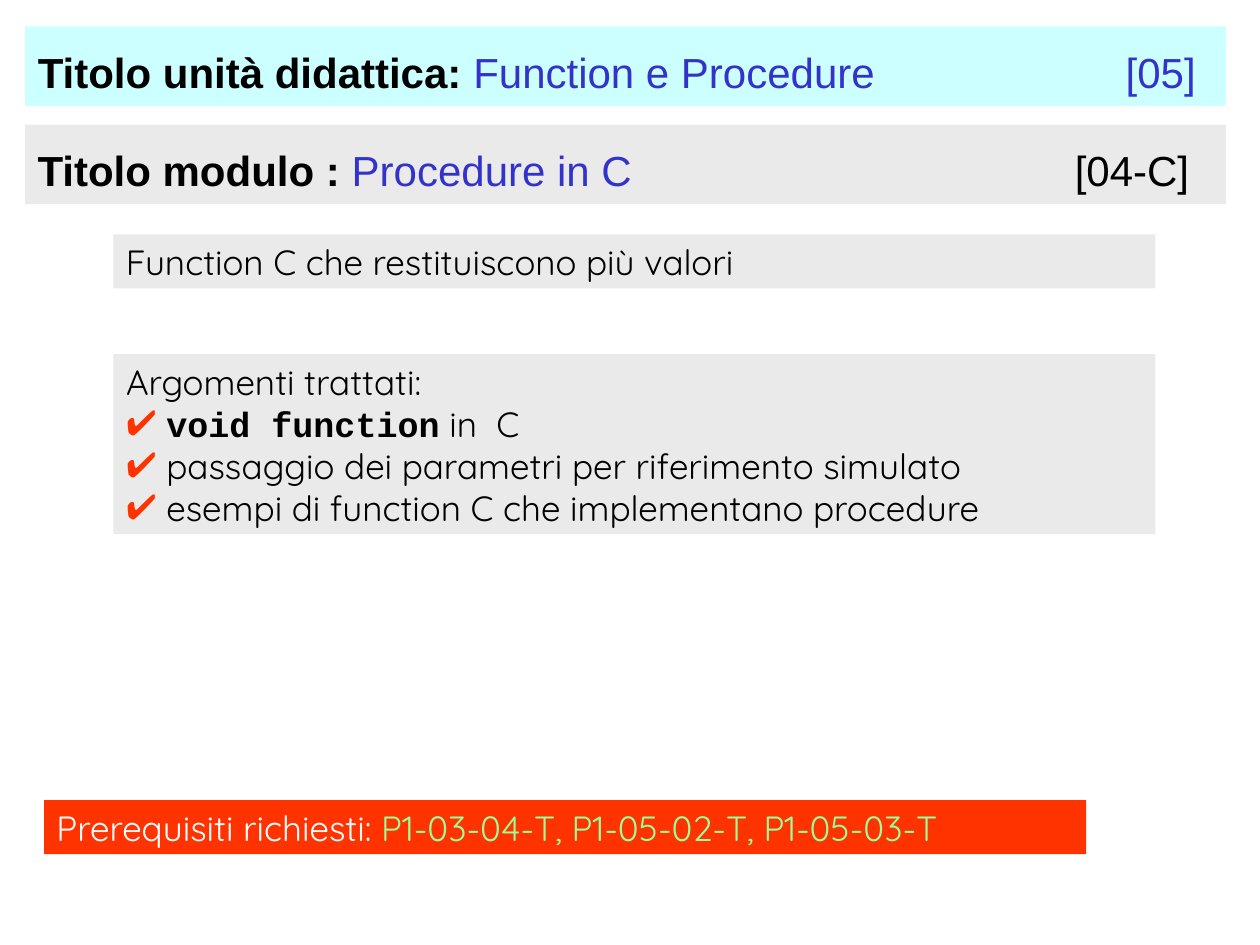
from lxml import etree
from pptx import Presentation
from pptx.dml.color import RGBColor
from pptx.enum.shapes import MSO_SHAPE
from pptx.enum.text import MSO_ANCHOR, MSO_AUTO_SIZE, PP_ALIGN
from pptx.oxml.ns import qn
from pptx.util import Inches, Pt

RECT = MSO_SHAPE.RECTANGLE
TOP, BOTTOM = MSO_ANCHOR.TOP, MSO_ANCHOR.BOTTOM
LEFT = PP_ALIGN.LEFT
FIXED = MSO_AUTO_SIZE.NONE

COLORS = {
    "white": "FFFFFF", "black": "000000", "cyan": "CCFFFF", "gray": "EAEAEA",
    "blue": "3333CC", "red": "FF3300", "green": "99FF99",
}


def paint(fill, name):
    fill.solid()
    fill.fore_color.rgb = RGBColor.from_string(COLORS[name])


def write(par, text, size=20, font="Quicksand", color="black", bold=False):
    run = par.add_run()
    run.text = text
    run.font.size = Pt(size)
    run.font.name = font
    run.font.bold = bold
    run.font.color.rgb = RGBColor.from_string(COLORS[color])


class Page:
    HEAD = {"size": 24, "font": "Arial"}
    INDENT = Inches(0.32)

    def __init__(self, slide):
        self.slide = slide

    def frame(self, shape, at, fill, anchor=TOP, foot=0.05):
        """Place a shape, colour it and ready its text; return the first paragraph."""
        shape.left, shape.top, shape.width, shape.height = map(Inches, at)
        paint(shape.fill, fill)
        shape.line.fill.background()
        text = shape.text_frame
        text.word_wrap = True
        text.auto_size = FIXED
        text.vertical_anchor = anchor
        text.margin_left = text.margin_right = Inches(0.1)
        text.margin_top, text.margin_bottom = Inches(0.05), Inches(foot)
        par = text.paragraphs[0]
        par.alignment = LEFT
        return par

    def box(self):
        shape = self.slide.shapes.add_shape(RECT, 0, 0, 0, 0)
        shape.shadow.inherit = False
        return shape

    def header(self, shape, top, fill, label, name, code, tint, stop):
        """Bold label and name at the left, code ending at a right tab."""
        par = self.frame(shape, (0.2, top, 9.53, 0.63), fill, BOTTOM, 0.07)
        tabs = etree.SubElement(par._p.get_or_add_pPr(), qn("a:tabLst"))
        etree.SubElement(tabs, qn("a:tab"), pos=str(Inches(stop)), algn="r")
        write(par, label, bold=True, **self.HEAD)
        write(par, name, color="blue", **self.HEAD)
        write(par, "\t" + code, color=tint, **self.HEAD)

    def note(self, left, top, fill, *runs):
        par = self.frame(self.box(), (left, top, 8.27, 0.43), fill)
        for text, color in runs:
            write(par, text, color=color)

    def topics(self, shape, top, intro, items):
        par = self.frame(shape, (0.9, top, 8.27, 1.43), "gray")
        self.bullet(par, None)
        write(par, intro)
        for item in items:
            par = shape.text_frame.add_paragraph()
            self.bullet(par, "✔")
            for text, style in item:
                write(par, text, **style)

    def bullet(self, par, mark):
        props = par._p.get_or_add_pPr()
        indent = self.INDENT if mark else 0
        props.set("marL", str(indent))
        props.set("indent", str(-indent))
        if mark:
            tint = etree.SubElement(props, qn("a:buClr"))
            etree.SubElement(tint, qn("a:srgbClr"), val=COLORS["red"])
            etree.SubElement(props, qn("a:buChar"), char=mark)
        else:
            etree.SubElement(props, qn("a:buNone"))
        par.alignment = LEFT
        par.space_before = Pt(0)


def main():
    deck = Presentation()
    deck.slide_width, deck.slide_height = Inches(10), Inches(7.5)
    slide = deck.slides.add_slide(deck.slide_layouts[1])
    paint(slide.background.fill, "white")
    page = Page(slide)

    page.header(slide.shapes.title, 0.21, "cyan", "Titolo unità didattica: ",
                "Function e Procedure", "[05]", "blue", 9.19)
    page.header(page.box(), 0.99, "gray", "Titolo modulo : ",
                "Procedure in C", "[04-C]", "black", 9.14)
    page.note(0.9, 1.86, "gray",
              ("Function C che restituiscono più valori", "black"))
    code = {"font": "Courier New", "bold": True}
    page.topics(slide.placeholders[1], 2.81, "Argomenti trattati:", [
        [("void function", code), (" in  C", {})],
        [("passaggio dei parametri per riferimento simulato", {})],
        [("esempi di function C che implementano procedure", {})],
    ])
    page.note(0.35, 6.35, "red", ("Prerequisiti richiesti: ", "white"),
              ("P1-03-04-T, P1-05-02-T, P1-05-03-T", "green"))
    deck.save("out.pptx")


if __name__ == "__main__":
    main()
